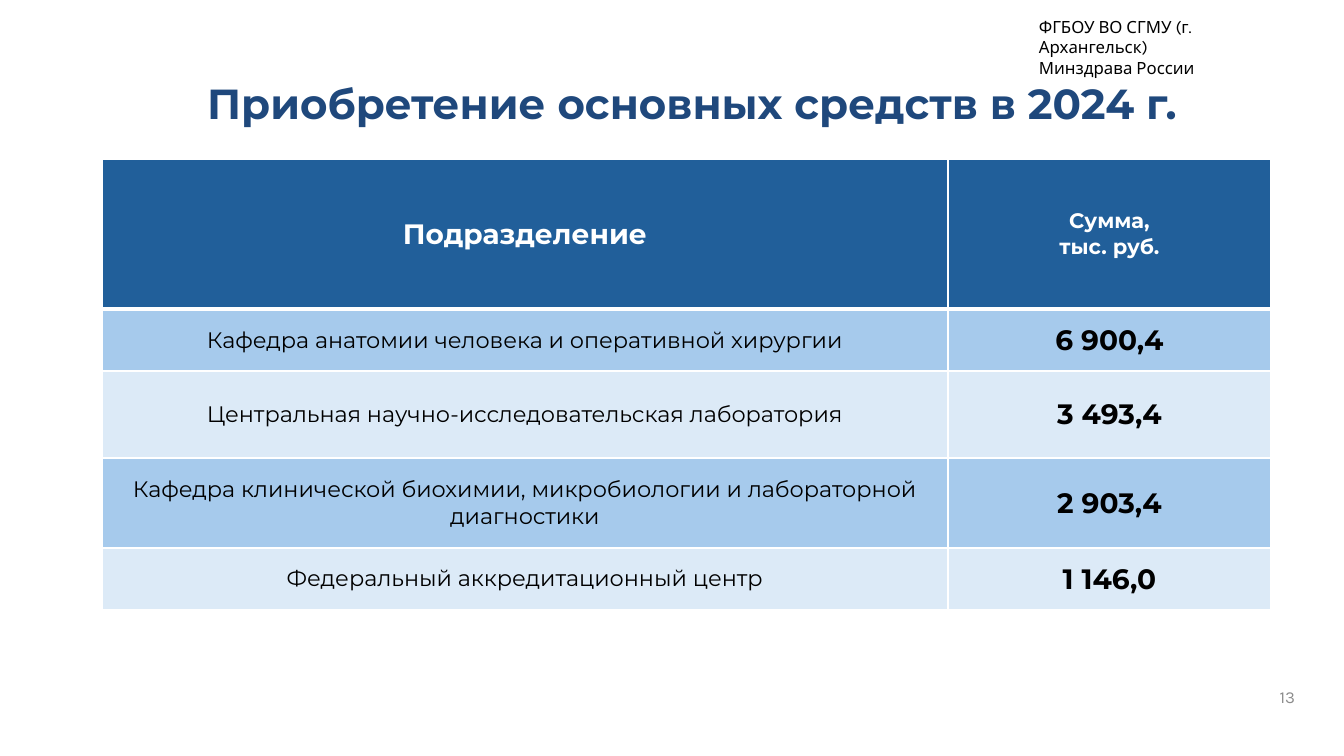
"""Build the slide on fixed asset purchases in 2024."""
from pptx import Presentation
from pptx.dml.color import RGBColor
from pptx.enum.text import MSO_ANCHOR, MSO_AUTO_SIZE, PP_ALIGN
from pptx.oxml import parse_xml
from pptx.util import Pt

PX = 914400 / 100.8
NS = "http://schemas.openxmlformats.org/drawingml/2006/main"
HEAD, SANS = "Montserrat", "Karla"
WHITE, BLACK, NAVY, GREY = "FFFFFF", "000000", "1F487C", "8C8C8C"
BLUE, BANDS = "215F9A", ["A6CAEC", "DCEAF7"]

TITLE = "Приобретение основных средств в 2024 г."
OWNER = ["ФГБОУ ВО СГМУ (г. Архангельск)", "Минздрава России"]
PAGE = ["13"]
ROWS = [
    (["Подразделение"], ["Сумма,", "тыс. руб."]),
    (["Кафедра анатомии человека и оперативной хирургии"], ["6 900,4"]),
    (["Центральная научно-исследовательская лаборатория"], ["3 493,4"]),
    (["Кафедра клинической биохимии, микробиологии и лабораторной диагностики"],
     ["2 903,4"]),
    (["Федеральный аккредитационный центр"], ["1 146,0"]),
]
WIDTHS = [846, 323]
HEIGHTS = [150, 62, 87, 90, 62]


def px(num):
    return round(num * PX)


def color(code):
    return RGBColor.from_string(code)


def write(frame, lines, font, size, ink, bold=False, align=PP_ALIGN.LEFT):
    for i, line in enumerate(lines):
        para = frame.add_paragraph() if i else frame.paragraphs[0]
        para.alignment = align
        run = para.add_run()
        run.text = line
        run.font.name, run.font.size, run.font.bold = font, Pt(size), bold
        run.font.color.rgb = color(ink)


def trim(frame):
    frame.margin_left = frame.margin_right = 0
    frame.margin_top = frame.margin_bottom = 0


def add_box(slide, *area):
    frame = slide.shapes.add_textbox(*map(px, area)).text_frame
    frame.word_wrap = True
    return frame


def edge(cell, low):
    props = cell._tc.get_or_add_tcPr()
    for i, (side, wide) in enumerate([("L", 1), ("R", 1), ("T", 1), ("B", low)]):
        props.insert(i, parse_xml(
            f'<a:ln{side} xmlns:a="{NS}" w="{Pt(wide)}"><a:solidFill>'
            f'<a:srgbClr val="{WHITE}"/></a:solidFill></a:ln{side}>'))


def add_title(slide):
    title = slide.shapes.title
    title.left, title.top, title.width, title.height = map(px, (41, 83, 1302, 53))
    frame = title.text_frame
    frame.auto_size = MSO_AUTO_SIZE.NONE
    frame.vertical_anchor = MSO_ANCHOR.TOP
    trim(frame)
    write(frame, [TITLE], HEAD, 30, NAVY, True, PP_ALIGN.CENTER)
    frame.paragraphs[0].line_spacing = 0.9


def add_grid(slide):
    area = map(px, (102, 159, sum(WIDTHS), sum(HEIGHTS)))
    grid = slide.shapes.add_table(len(ROWS), len(WIDTHS), *area).table
    for col, wide in zip(grid.columns, WIDTHS):
        col.width = px(wide)
    for r, (row, high) in enumerate(zip(ROWS, HEIGHTS)):
        grid.rows[r].height = px(high)
        sizes = (16, 20) if r else (20, 15)
        for c, lines in enumerate(row):
            cell = grid.cell(r, c)
            cell.vertical_anchor = MSO_ANCHOR.MIDDLE
            cell.fill.solid()
            cell.fill.fore_color.rgb = color(BANDS[(r - 1) % 2] if r else BLUE)
            edge(cell, 1 if r else 3)
            write(cell.text_frame, lines, HEAD, sizes[c],
                  BLACK if r else WHITE, r == 0 or c == 1, PP_ALIGN.CENTER)
            if r == 1:
                edge_top = cell._tc.tcPr.find(f"{{{NS}}}lnT")
                edge_top.set("w", str(Pt(3)))


def main():
    deck = Presentation()
    deck.slide_width, deck.slide_height = px(1344), px(756)
    slide = deck.slides.add_slide(deck.slide_layouts[5])
    write(add_box(slide, 1029, 12, 284, 50), OWNER, SANS, 12, BLACK)
    page = add_box(slide, 1044, 687, 251, 40)
    trim(page)
    write(page, PAGE, SANS, 12, GREY, align=PP_ALIGN.RIGHT)
    add_title(slide)
    add_grid(slide)
    deck.save("out.pptx")


if __name__ == "__main__":
    main()
